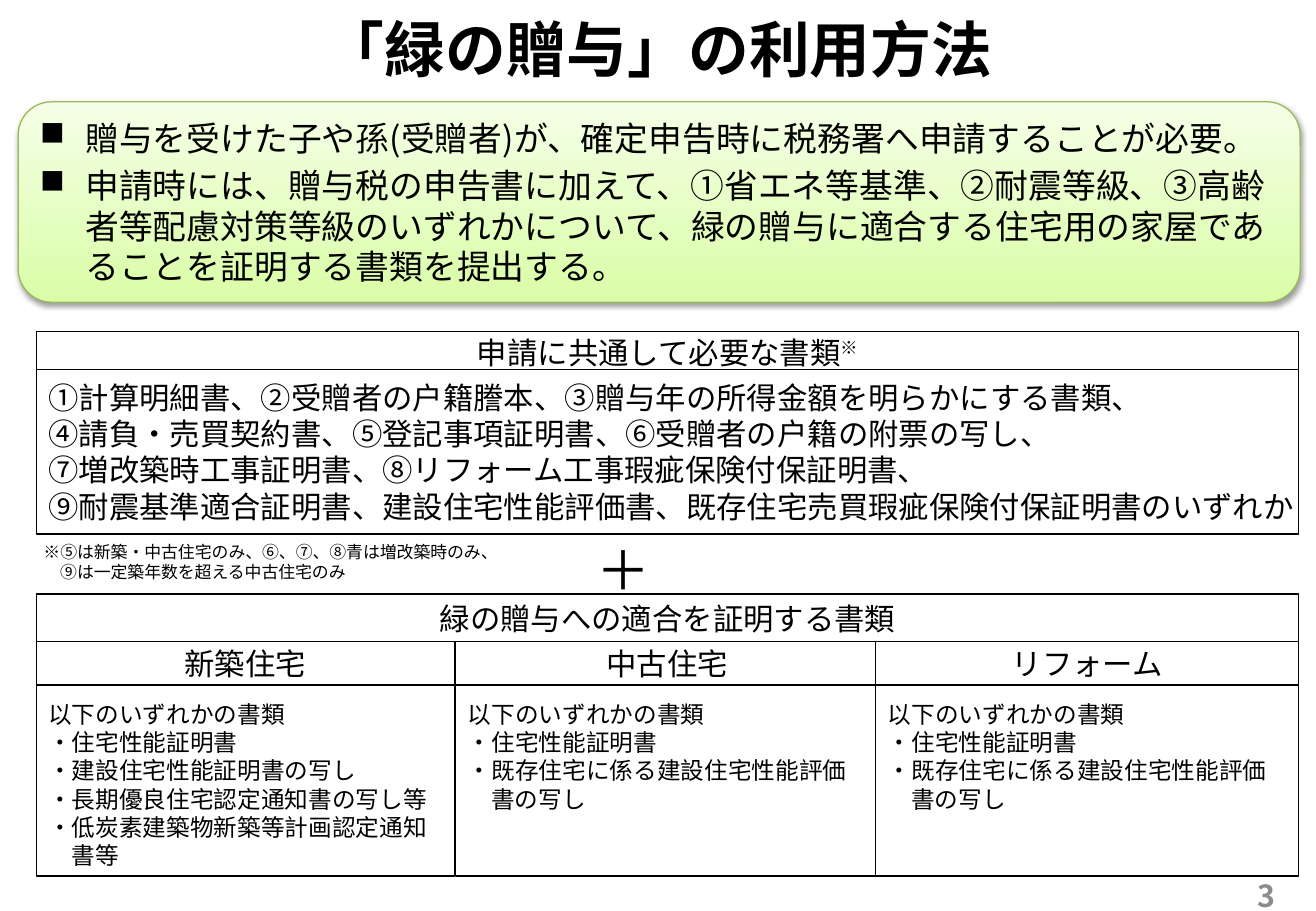
from lxml import etree
from pptx import Presentation
from pptx.dml.color import RGBColor
from pptx.enum import shapes, text
from pptx.oxml import parse_xml
from pptx.oxml.ns import nsdecls, qn
from pptx.util import Cm, Pt

FONT = "Noto Sans CJK JP"
BLACK = RGBColor(0x00, 0x00, 0x00)
WHITE = RGBColor(0xFF, 0xFF, 0xFF)
GREY = RGBColor(0x8C, 0x8C, 0x8C)
GREEN_LINE = RGBColor(0x98, 0xB9, 0x55)
GREEN_DEEP = RGBColor(0xDA, 0xFD, 0xA7)
GREEN_PALE = RGBColor(0xF5, 0xFF, 0xE7)

TITLE = "「緑の贈与」の利用方法"
PAGE_NUMBER = "3"
SUMMARY = [
    "贈与を受けた子や孫(受贈者)が、確定申告時に税務署へ申請することが必要。",
    "申請時には、贈与税の申告書に加えて、①省エネ等基準、②耐震等級、③高齢者等配慮対策等級のいずれかについて、"
    "緑の贈与に適合する住宅用の家屋であることを証明する書類を提出する。",
]
COMMON_HEADING = "申請に共通して必要な書類"
NOTE_MARK = "※"
COMMON_DOCUMENTS = [
    "①計算明細書、②受贈者の戸籍謄本、③贈与年の所得金額を明らかにする書類、",
    "④請負・売買契約書、⑤登記事項証明書、⑥受贈者の戸籍の附票の写し、",
    "⑦増改築時工事証明書、⑧リフォーム工事瑕疵保険付保証明書、",
    "⑨耐震基準適合証明書、建設住宅性能評価書、既存住宅売買瑕疵保険付保証明書のいずれか",
]
NOTES = [
    "※⑤は新築・中古住宅のみ、⑥、⑦、⑧青は増改築時のみ、",
    "⑨は一定築年数を超える中古住宅のみ",
]
PROOF_HEADING = "緑の贈与への適合を証明する書類"
PROOF_INTRO = "以下のいずれかの書類"
EXISTING_HOME = ["・住宅性能証明書", "・既存住宅に係る建設住宅性能評価書の写し"]
PROOF_COLUMNS = [
    ("新築住宅", ["・住宅性能証明書", "・建設住宅性能証明書の写し",
              "・長期優良住宅認定通知書の写し等", "・低炭素建築物新築等計画認定通知書等"]),
    ("中古住宅", EXISTING_HOME),
    ("リフォーム", EXISTING_HOME),
]

# Frame of the two document blocks, in centimetres
LEFT, WIDTH = 0.76, 26.39
COLUMN_LEFTS = [LEFT, 9.53, 18.31]
COLUMN_WIDTHS = [8.74, 8.84, 8.84]

CENTER = text.PP_ALIGN.CENTER
TOP, MIDDLE = text.MSO_ANCHOR.TOP, text.MSO_ANCHOR.MIDDLE


def style_run(span, size, color=BLACK, bold=False):
    span.font.size = Pt(size)
    span.font.bold = bold
    span.font.color.rgb = color
    span.font.name = FONT
    etree.SubElement(span.font._element, qn("a:ea")).set("typeface", FONT)


def write(box, lines, size, align=text.PP_ALIGN.LEFT, anchor=TOP, wrap=True, color=BLACK, bold=False):
    frame = box.text_frame
    frame.word_wrap = wrap
    frame.vertical_anchor = anchor
    frame.text = "\n".join(lines)
    for para in frame.paragraphs:
        para.alignment = align
        for span in para.runs:
            style_run(span, size, color, bold)
    return frame.paragraphs


def indent(para, margin, first):
    """Set the left margin and first-line offset of a paragraph, in centimetres."""
    properties = para._p.get_or_add_pPr()
    properties.set("marL", str(Cm(margin)))
    properties.set("indent", str(Cm(first)))
    return properties


def add_label(page, left, top, width, height, line, size, **style):
    box = page.shapes.add_textbox(Cm(left), Cm(top), Cm(width), Cm(height))
    return write(box, [line], size, align=CENTER, **style)


def add_cell(page, left, top, width, height):
    cell = page.shapes.add_shape(shapes.MSO_SHAPE.RECTANGLE, Cm(left), Cm(top), Cm(width), Cm(height))
    cell.shadow.inherit = False
    cell.fill.solid()
    cell.fill.fore_color.rgb = WHITE
    cell.line.color.rgb = BLACK
    cell.line.width = Pt(0.75)
    return cell


def add_heading(page, left, top, width, height, line):
    cell = add_cell(page, left, top, width, height)
    return write(cell, [line], 18, align=CENTER, anchor=MIDDLE, wrap=False)


def add_summary(page):
    panel = page.shapes.add_shape(shapes.MSO_SHAPE.ROUNDED_RECTANGLE, Cm(0.38), Cm(2.13), Cm(26.8), Cm(4.19))
    panel.fill.gradient()
    panel.fill.gradient_angle = 90
    for stop, color in zip(panel.fill.gradient_stops, (GREEN_DEEP, GREEN_PALE)):
        stop.color.rgb = color
    panel.line.color.rgb = GREEN_LINE
    panel.line.width = Pt(0.75)
    panel._element.spPr.append(parse_xml(
        f'<a:effectLst {nsdecls("a")}><a:outerShdw blurRad="{Pt(3.1)}" dist="{Pt(1.6)}" dir="5400000" '
        'rotWithShape="0"><a:srgbClr val="000000"><a:alpha val="38000"/></a:srgbClr></a:outerShdw></a:effectLst>'))
    for index, para in enumerate(write(panel, SUMMARY, 20)):
        etree.SubElement(indent(para, 0.95, -0.95), qn("a:buChar")).set("char", "■")
        if index:
            para.space_before = Pt(4)


def add_common_documents(page):
    heading = add_heading(page, LEFT, 6.93, WIDTH, 0.86, COMMON_HEADING)[0]
    mark = heading.add_run()
    mark.text = NOTE_MARK
    style_run(mark, 18)
    mark.font._element.set("baseline", "30000")
    body = add_cell(page, LEFT, 7.72, WIDTH, 3.45)
    write(body, COMMON_DOCUMENTS, 18, anchor=MIDDLE, wrap=False)


def add_proof_documents(page):
    add_heading(page, LEFT, 12.42, WIDTH, 1.02, PROOF_HEADING)
    for left, width, (name, documents) in zip(COLUMN_LEFTS, COLUMN_WIDTHS, PROOF_COLUMNS):
        body = add_cell(page, left, 14.33, width, 3.99)
        body.text_frame.margin_top = Cm(0.3)
        for para in write(body, [PROOF_INTRO] + documents, 14)[1:]:
            indent(para, 0.49, -0.49)
        add_heading(page, left, 13.41, width, 0.91, name)


def main():
    deck = Presentation()
    deck.slide_width, deck.slide_height = Cm(27.51), Cm(19.05)
    page = deck.slides.add_slide(deck.slide_layouts[6])
    add_label(page, 25.6, 18.21, 1.75, 1.04, PAGE_NUMBER, 18, anchor=MIDDLE, color=GREY, bold=True)
    add_label(page, 0, 0.13, 27.51, 1.12, TITLE, 36, bold=True)
    add_summary(page)
    add_common_documents(page)
    add_proof_documents(page)
    add_label(page, 10.95, 11.1, 4.19, 1.63, "＋", 32)
    notes = page.shapes.add_textbox(Cm(0.66), Cm(11.2), Cm(24.99), Cm(1.12))
    indent(write(notes, NOTES, 10)[1], 0.35, 0)
    deck.save("out.pptx")


if __name__ == "__main__":
    main()
